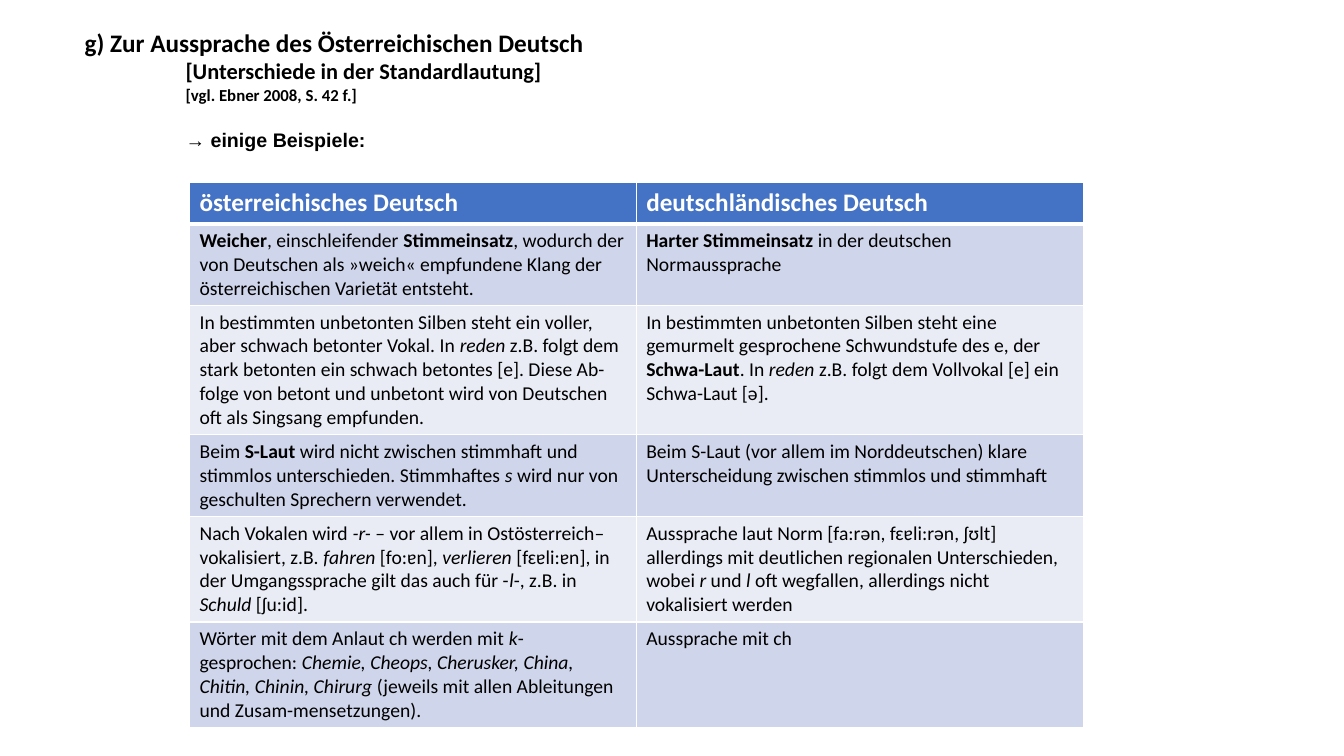
from pptx import Presentation
from pptx.dml.color import RGBColor
from pptx.enum.text import MSO_ANCHOR, MSO_AUTO_SIZE, PP_ALIGN
from pptx.oxml import parse_xml
from pptx.oxml.ns import nsdecls
from pptx.util import Inches, Pt

COLORS = {
    "text": "000000",
    "white": "FFFFFF",
    "header": "4472C4",
    "band_dark": "CFD5EA",
    "band_light": "E9EBF5",
}


def set_border(cell, side, width):
    cell._tc.get_or_add_tcPr().append(parse_xml(
        f'<a:ln{side} {nsdecls("a")} w="{Pt(width)}"><a:solidFill>'
        f'<a:srgbClr val="{COLORS["white"]}"/></a:solidFill></a:ln{side}>'))


def add_marked_runs(p, text):
    """*...* marks bold, _..._ marks italic."""
    for i, part in enumerate(text.split("*")):
        for j, piece in enumerate(part.split("_")):
            if piece:
                r = p.add_run()
                r.text = piece
                r.font.bold = i % 2 == 1
                r.font.italic = j % 2 == 1


prs = Presentation()
prs.slide_width, prs.slide_height = Inches(13.33), Inches(7.5)
s = prs.slides.add_slide(prs.slide_layouts[5])

# Heading with indented sub-lines: text, size, font, indent, space before
heading = [
    ("g) Zur Aussprache des Österreichischen Deutsch", 18, "Calibri", 0, 0),
    ("[Unterschiede in der Standardlautung]", 16, "Calibri", 1, 0),
    ("[vgl. Ebner 2008, S. 42 f.]", 12, "Calibri", 1, 0),
    ("→ einige Beispiele:", 14, "Arial", 1, 17),
]
title = s.shapes.title
title.left, title.top = Inches(0.74), Inches(0.22)
title.width, title.height = Inches(7.72), Inches(1.5)
tf = title.text_frame
tf.word_wrap = True
tf.auto_size = MSO_AUTO_SIZE.NONE
tf.vertical_anchor = MSO_ANCHOR.TOP
for i, (text, size, font, indent, before) in enumerate(heading):
    p = tf.paragraphs[0] if i == 0 else tf.add_paragraph()
    p.text = text
    p.alignment = PP_ALIGN.LEFT
    p.space_before = Pt(before)
    p._p.get_or_add_pPr().set("marL", str(Inches(indent)))
    p.font.name, p.font.size, p.font.bold = font, Pt(size), True
    p.font.color.rgb = RGBColor.from_string(COLORS["text"])

# Comparison table: row height, Austrian German, German German
rows = [
    (0.41, "*österreichisches Deutsch*", "*deutschländisches Deutsch*"),
    (0.8,
     "*Weicher*, einschleifender *Stimmeinsatz*, wodurch der von Deutschen als "
     "»weich« empfundene Klang der österreichischen Varietät entsteht.",
     "*Harter Stimmeinsatz *in der deutschen Normaussprache"),
    (1.27,
     "In bestimmten unbetonten Silben steht ein voller, aber schwach betonter "
     "Vokal. In _reden_ z.B. folgt dem stark betonten ein schwach betontes [e]. "
     "Diese Ab-folge von betont und unbetont wird von Deutschen oft als Singsang "
     "empfunden.",
     "In bestimmten unbetonten Silben steht eine gemurmelt gesprochene "
     "Schwundstufe des e, der *Schwa-Laut*. In _reden_ z.B. folgt dem Vollvokal "
     "[e] ein Schwa-Laut [ə]."),
    (0.8,
     "Beim *S-Laut* wird nicht zwischen stimmhaft und stimmlos unterschieden. "
     "Stimmhaftes _s_ wird nur von geschulten Sprechern verwendet.",
     "Beim S-Laut (vor allem im Norddeutschen) klare Unterscheidung zwischen "
     "stimmlos und stimmhaft"),
    (1.03,
     "Nach Vokalen wird _-r- _– vor allem in Ostösterreich– vokalisiert, z.B. "
     "_fahren_ [fo:ɐn], _verlieren_ [fɛɐli:ɐn], in der Umgangssprache gilt das "
     "auch für -_l_-, z.B. in _Schuld_ [ʃu:id].",
     "Aussprache laut Norm [fa:rən, fɛɐli:rən, ʃʊlt] allerdings mit deutlichen "
     "regionalen Unterschieden, wobei _r_ und _l _oft wegfallen, allerdings nicht "
     "vokalisiert werden"),
    (1.03,
     "Wörter mit dem Anlaut ch werden mit _k_- gesprochen: _Chemie, Cheops, "
     "Cherusker, China, Chitin, Chinin, Chirurg _(jeweils mit allen Ableitungen "
     "und Zusam-mensetzungen).",
     "Aussprache mit ch"),
]
table = s.shapes.add_table(len(rows), 2, Inches(1.88), Inches(1.81),
                           Inches(8.87), Inches(5.34)).table
table.columns[0].width, table.columns[1].width = Inches(4.43), Inches(4.44)

for i, (height, *texts) in enumerate(rows):
    table.rows[i].height = Inches(height)
    if i == 0:
        fill, color, size = "header", "white", 18
    else:
        fill, color, size = "band_dark" if i % 2 else "band_light", "text", 14
    for j, text in enumerate(texts):
        cell = table.cell(i, j)
        for side in "LRTB":
            below_header = (i, side) in ((0, "B"), (1, "T"))
            set_border(cell, side, 3 if below_header else 1)
        cell.fill.solid()
        cell.fill.fore_color.rgb = RGBColor.from_string(COLORS[fill])
        p = cell.text_frame.paragraphs[0]
        add_marked_runs(p, text)
        p.font.name, p.font.size = "Calibri", Pt(size)
        p.font.color.rgb = RGBColor.from_string(COLORS[color])

prs.save("out.pptx")
